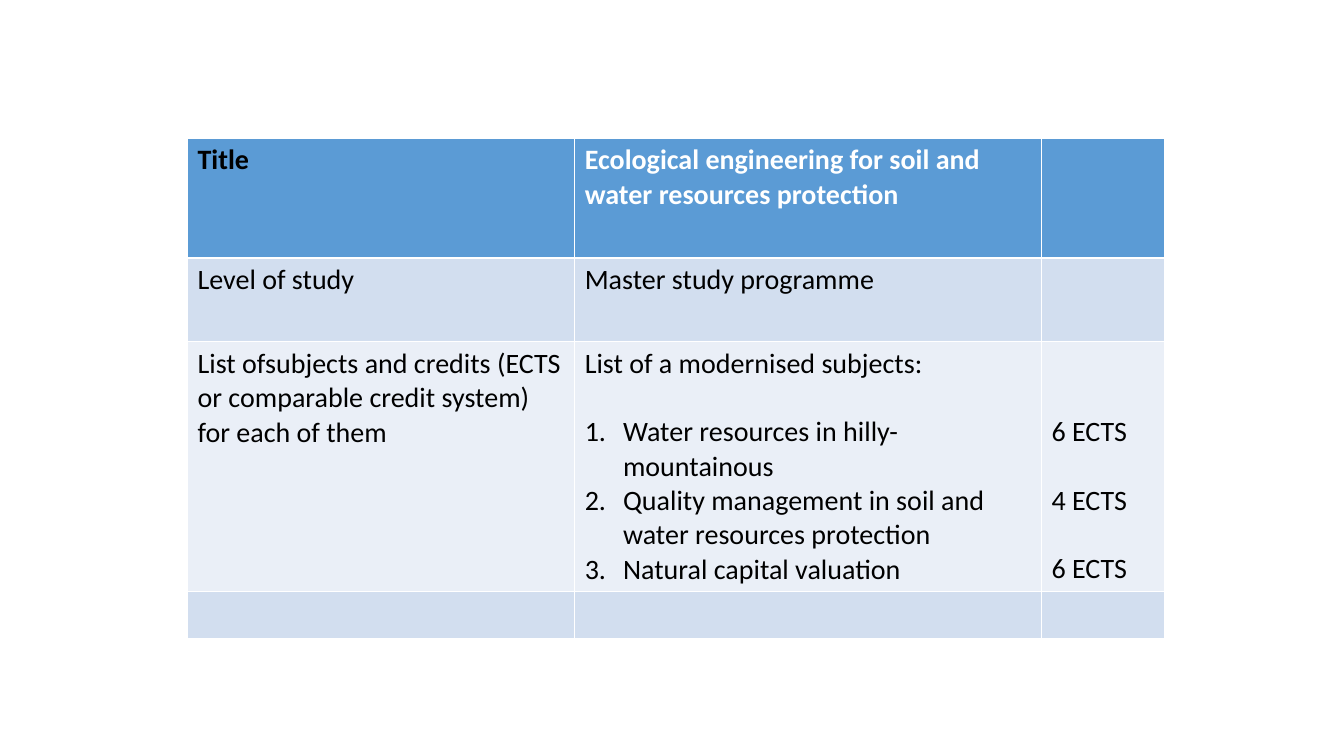
from pptx import Presentation
from pptx.dml.color import RGBColor
from pptx.oxml.ns import qn
from pptx.util import Inches, Pt

BLANK_LAYOUT = 6
COLORS = {"header": "5B9BD5", "band": "D2DEEF", "light": "EAEFF7",
          "text": "000000", "header_text": "FFFFFF"}
FONT = {"name": "Calibri", "size": Pt(20)}
LINE = 24.4  # points taken by one line of text
INDENT = Inches(0.38)

TABLE_BOX = (1.86, 1.37, 9.69, 4.96)
COLUMN_WIDTHS = (3.84, 4.63, 1.22)
ROW_HEIGHTS = (1.19, 0.83, 2.47, 0.47)
ROW_FILLS = ("header", "band", "light", "band")

SUBJECTS = ["Water resources in hilly-mountainous",
            "Quality management in soil and water resources protection",
            "Natural capital valuation"]
CREDITS = ["6 ECTS", "4 ECTS", "6 ECTS"]
ROWS = [
    [["Title"], ["Ecological engineering for soil and water resources protection"], []],
    [["Level of study"], ["Master study programme"], []],
    [["List ofsubjects and credits (ECTS or comparable credit system) for each of them"],
     ["List of a modernised subjects:", *SUBJECTS], CREDITS],
    [[], [], []],
]


def number_paragraph(para):
    properties = para._p.get_or_add_pPr()
    properties.set("marL", str(INDENT))
    properties.set("indent", str(-INDENT))
    number = properties.makeelement(qn("a:buAutoNum"), {"type": "arabicPeriod"})
    properties.append(number)


def write_cell(cell, lines, color, bold):
    for index, line in enumerate(lines):
        para = cell.text_frame.paragraphs[0] if index == 0 else cell.text_frame.add_paragraph()
        if line in SUBJECTS:
            number_paragraph(para)
        span = para.add_run()
        span.text = line
        for name, value in {**FONT, "bold": bold}.items():
            setattr(span.font, name, value)
        span.font.color.rgb = RGBColor.from_string(COLORS[color])


def align_credits(subject_cell, credit_cell):
    """Set each credit beside the first line of its subject."""
    subject_cell.text_frame.paragraphs[1].space_before = Pt(LINE)
    credit_cell.margin_top = Inches(0.05) + Pt(2 * LINE)
    for para in credit_cell.text_frame.paragraphs[1:]:
        para.space_before = Pt(LINE)


def add_programme_table(page, box):
    table = page.shapes.add_table(len(ROW_HEIGHTS), len(COLUMN_WIDTHS),
                                  *map(Inches, box)).table
    for column, width in zip(table.columns, COLUMN_WIDTHS):
        column.width = Inches(width)
    for row, height in zip(table.rows, ROW_HEIGHTS):
        row.height = Inches(height)
    for row_index, (row, fill) in enumerate(zip(ROWS, ROW_FILLS)):
        for column_index, lines in enumerate(row):
            cell = table.cell(row_index, column_index)
            cell.fill.solid()
            cell.fill.fore_color.rgb = RGBColor.from_string(COLORS[fill])
            is_header = row_index == 0
            color = "header_text" if is_header and column_index else "text"
            write_cell(cell, lines, color, is_header)
    align_credits(table.cell(2, 1), table.cell(2, 2))


def main():
    deck = Presentation()
    deck.slide_width, deck.slide_height = Inches(13.33), Inches(7.5)
    page = deck.slides.add_slide(deck.slide_layouts[BLANK_LAYOUT])
    add_programme_table(page, TABLE_BOX)
    deck.save("out.pptx")


if __name__ == "__main__":
    main()
